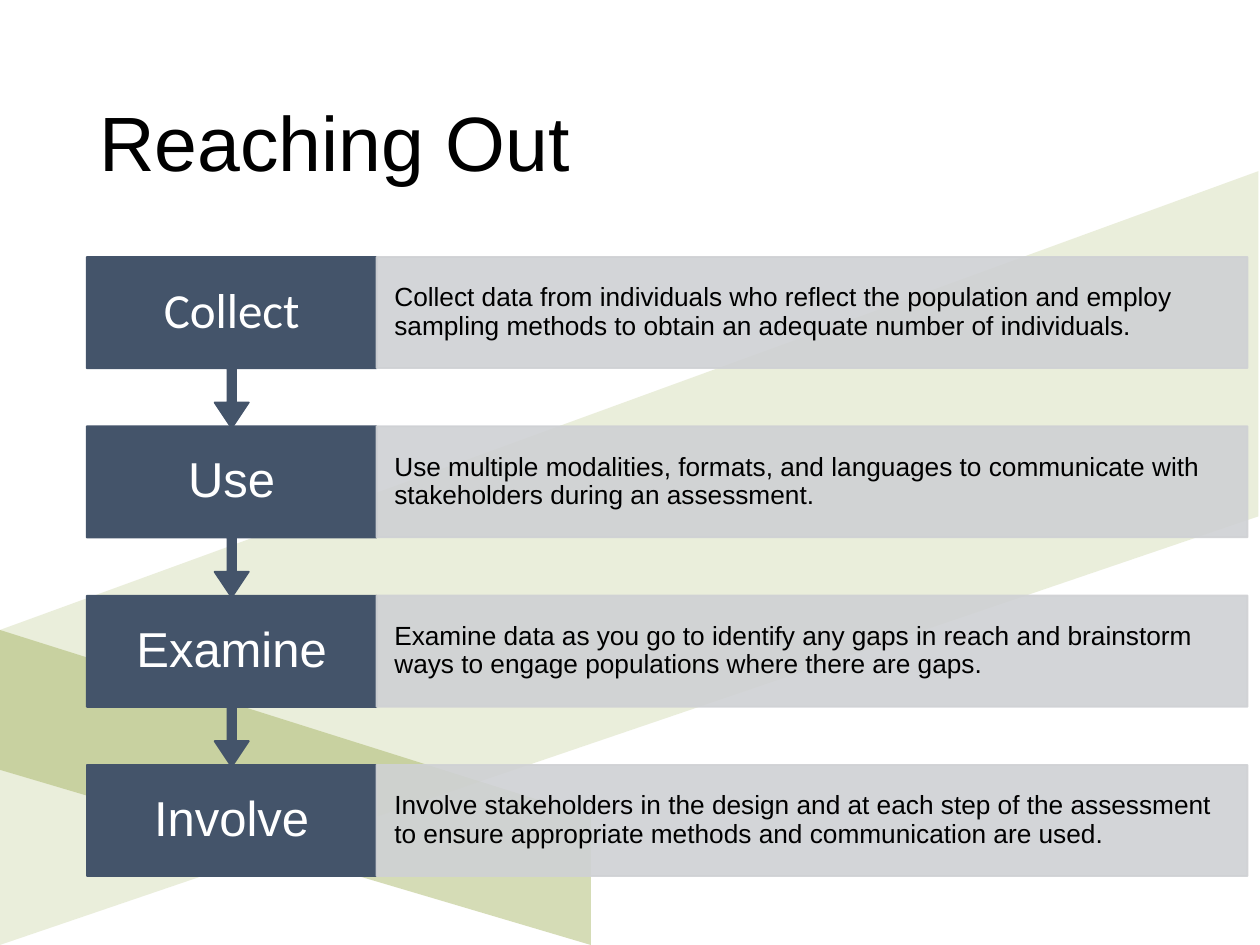
from dataclasses import dataclass

from lxml import etree
from pptx import Presentation
from pptx.dml.color import RGBColor
from pptx.enum.shapes import MSO_SHAPE
from pptx.enum.text import MSO_ANCHOR, PP_ALIGN
from pptx.oxml.ns import qn
from pptx.util import Cm, Pt

RECTANGLE = MSO_SHAPE.RECTANGLE
CALLOUT = MSO_SHAPE.UP_ARROW_CALLOUT
MIDDLE = MSO_ANCHOR.MIDDLE
LEFT, CENTER = PP_ALIGN.LEFT, PP_ALIGN.CENTER


@dataclass(frozen=True)
class Theme:
    """Colours, fonts and type sizes of the slide."""

    olive: RGBColor = RGBColor(0x94, 0xA5, 0x45)
    navy: RGBColor = RGBColor(0x44, 0x54, 0x6A)
    grey: RGBColor = RGBColor(0xCF, 0xD1, 0xD4)
    black: RGBColor = RGBColor(0, 0, 0)
    white: RGBColor = RGBColor(0xFF, 0xFF, 0xFF)
    font: str = "Arial"
    accent_font: str = "Calibri"
    title_size: int = 44
    label_size: int = 28
    detail_size: int = 15


THEME = Theme()
RIBBONS = [
    ((0, 3.45), [(0, 9.25), (25.37, 0), (25.37, 6.96), (0, 15.6)], 19),
    ((0, 12.7), [(11.91, 3.76), (0, 0), (0, 2.82), (11.91, 6.35)], 39),
]
STEPS = [
    ("Collect", THEME.accent_font,
     "Collect data from individuals who reflect the population and employ "
     "sampling methods to obtain an adequate number of individuals."),
    ("Use", THEME.font,
     "Use multiple modalities, formats, and languages to communicate with "
     "stakeholders during an assessment."),
    ("Examine", THEME.font,
     "Examine data as you go to identify any gaps in reach and brainstorm "
     "ways to engage populations where there are gaps."),
    ("Involve", THEME.font,
     "Involve stakeholders in the design and at each step of the assessment "
     "to ensure appropriate methods and communication are used."),
]


def apply_format(target, values):
    """Set each named attribute of the target."""
    for name, value in values.items():
        setattr(target, name, value)


def paint(shape, color, opacity=100, outlined=True):
    """Give a shape one flat colour, with an optional matching outline."""
    shape.shadow.inherit = False
    shape.fill.solid()
    shape.fill.fore_color.rgb = color
    if outlined:
        shape.line.color.rgb = color
        shape.line.width = Pt(1)
    else:
        shape.line.fill.background()
    if opacity < 100:
        for tint in shape._element.spPr.iter(qn("a:srgbClr")):
            etree.SubElement(tint, qn("a:alpha"), val=str(opacity * 1000))


def write(shape, text, size, color, font=THEME.font, align=LEFT, inset=(0.25, 0.13)):
    """Write one vertically centred paragraph in a shape."""
    side, edge = map(Cm, inset)
    frame = shape.text_frame
    apply_format(frame, {
        "word_wrap": True, "vertical_anchor": MIDDLE,
        "margin_left": side, "margin_right": side,
        "margin_top": edge, "margin_bottom": edge,
    })
    paragraph = frame.paragraphs[0]
    apply_format(paragraph, {"text": text, "alignment": align, "line_spacing": 0.9})
    apply_format(paragraph.font, {"name": font, "size": Pt(size)})
    paragraph.font.color.rgb = color


def add_ribbon(slide, origin, outline, opacity):
    """Draw a translucent ribbon from an outline relative to its origin."""
    left, top = origin
    corners = [(Cm(left + x), Cm(top + y)) for x, y in outline]
    builder = slide.shapes.build_freeform(*corners[0])
    builder.add_line_segments(corners[1:], close=True)
    paint(builder.convert_to_shape(), THEME.olive, opacity, outlined=False)


def add_title(slide, box, text):
    """Place the slide title in its box."""
    title = slide.shapes.add_textbox(*map(Cm, box))
    write(title, text, THEME.title_size, THEME.black)


def add_step(slide, box, label_width, arrow_drop, step):
    """Place a label, its detail bar and, given a drop, an arrow below."""
    left, top, width, height = box
    label, font, detail = step
    block_box = map(Cm, (left, top, label_width, height + arrow_drop))
    block = slide.shapes.add_shape(CALLOUT if arrow_drop else RECTANGLE, *block_box)
    if arrow_drop:
        block.rotation = 180
        for index, value in enumerate((0.05, 0.1, 0.15, 0.65)):
            block.adjustments[index] = value
    paint(block, THEME.navy)

    caption = slide.shapes.add_textbox(*map(Cm, (left, top, label_width, height)))
    write(caption, label, THEME.label_size, THEME.white, font, CENTER, (0.41, 0.56))

    bar_box = map(Cm, (left + label_width, top, width - label_width, height))
    bar = slide.shapes.add_shape(RECTANGLE, *bar_box)
    paint(bar, THEME.grey, 90)
    write(bar, detail, THEME.detail_size, THEME.black, inset=(0.36, 0.53))


def add_process(slide, box, steps):
    """Stack the steps down the box, the last one at the back."""
    left, top, width, height = box
    row_height, label_width, arrow_drop = 2.24, 5.84, 1.21
    pitch = (height - row_height) / (len(steps) - 1)
    last = len(steps) - 1
    for index, step in reversed(list(enumerate(steps))):
        row = (left, top + index * pitch, width, row_height)
        add_step(slide, row, label_width, arrow_drop if index < last else 0, step)


def main():
    """Build and save the slide."""
    deck = Presentation()
    apply_format(deck, {"slide_width": Cm(25.4), "slide_height": Cm(19.05)})
    slide = deck.slides.add_slide(deck.slide_layouts[6])
    for ribbon in RIBBONS:
        add_ribbon(slide, *ribbon)
    add_title(slide, (1.75, 1.12, 21.89, 3.68), "Reaching Out")
    add_process(slide, (1.75, 5.18, 23.4, 12.48), STEPS)
    deck.save("out.pptx")


if __name__ == "__main__":
    main()
